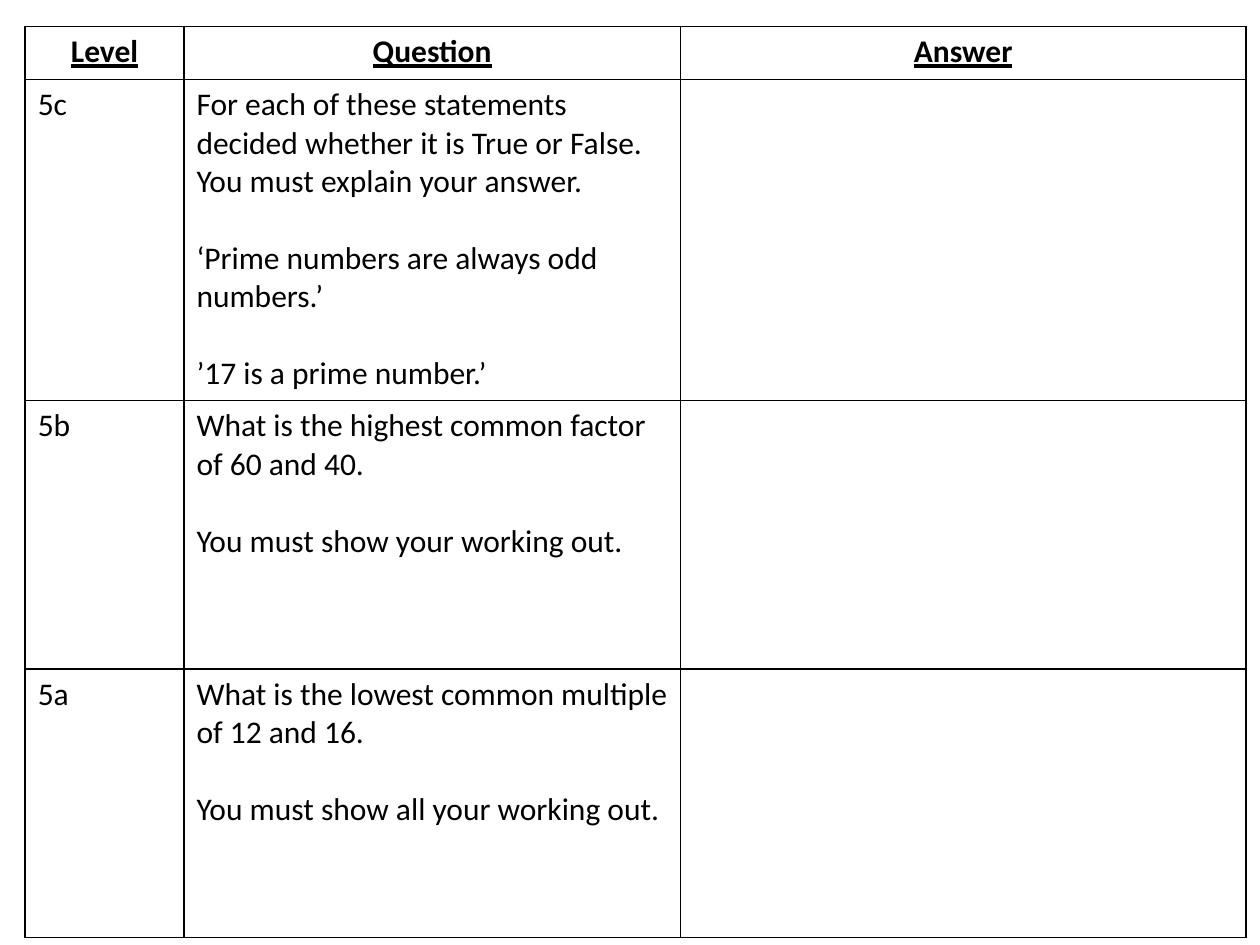
"""Build a slide with a table of levelled number questions."""
from lxml.etree import SubElement
from pptx import Presentation
from pptx.dml.color import RGBColor
from pptx.enum.text import PP_ALIGN
from pptx.oxml.ns import qn
from pptx.util import Inches, Pt

BLACK = RGBColor(0, 0, 0)
FONT = "Calibri"
LEFT, TOP = 0.2, 0.21
COLS = [1.26, 3.94, 4.49]
ROW_HEIGHTS = [0.42, 2.55, 2.13, 2.13]
HEADER = ["Level", "Question", "Answer"]
QUESTIONS = [
    ("5c", ["For each of these statements decided whether it is True or False. "
            "You must explain your answer.",
            "‘Prime numbers are always odd numbers.’",
            "’17 is a prime number.’"]),
    ("5b", ["What is the highest common factor of 60 and 40.",
            "You must show your working out."]),
    ("5a", ["What is the lowest common multiple of 12 and 16.",
            "You must show all your working out."]),
]


def write(cell, paragraphs, size=18, heading=False, gap=22):
    tf = cell.text_frame
    for i, text in enumerate(paragraphs):
        p = tf.add_paragraph() if i else tf.paragraphs[0]
        p.alignment = PP_ALIGN.CENTER if heading else PP_ALIGN.LEFT
        p.space_before = Pt(gap if i else 0)
        r = p.add_run()
        r.text = text
        r.font.name, r.font.size = FONT, Pt(size)
        r.font.bold = r.font.underline = heading
        r.font.color.rgb = BLACK


def add_borders(cell, width=1):
    tc_pr = cell._tc.get_or_add_tcPr()
    for side in ("a:lnL", "a:lnR", "a:lnT", "a:lnB"):
        ln = SubElement(tc_pr, qn(side), w=str(Pt(width)))
        fill = SubElement(ln, qn("a:solidFill"))
        SubElement(fill, qn("a:srgbClr"), val=str(BLACK))


def main():
    prs = Presentation()
    prs.slide_width, prs.slide_height = Inches(10), Inches(7.5)
    s = prs.slides.add_slide(prs.slide_layouts[6])
    table = s.shapes.add_table(
        len(ROW_HEIGHTS), len(COLS), Inches(LEFT), Inches(TOP),
        Inches(sum(COLS)), Inches(sum(ROW_HEIGHTS))).table
    table.first_row = table.horz_banding = False
    for column, width in zip(table.columns, COLS):
        column.width = Inches(width)
    for row, height in zip(table.rows, ROW_HEIGHTS):
        row.height = Inches(height)
    for cell in table.iter_cells():
        add_borders(cell)
        cell.fill.background()
    for c, title in enumerate(HEADER):
        write(table.cell(0, c), [title], heading=True)
    for r, (level, question) in enumerate(QUESTIONS, 1):
        write(table.cell(r, 0), [level])
        write(table.cell(r, 1), question)
    prs.save("out.pptx")


if __name__ == "__main__":
    main()
